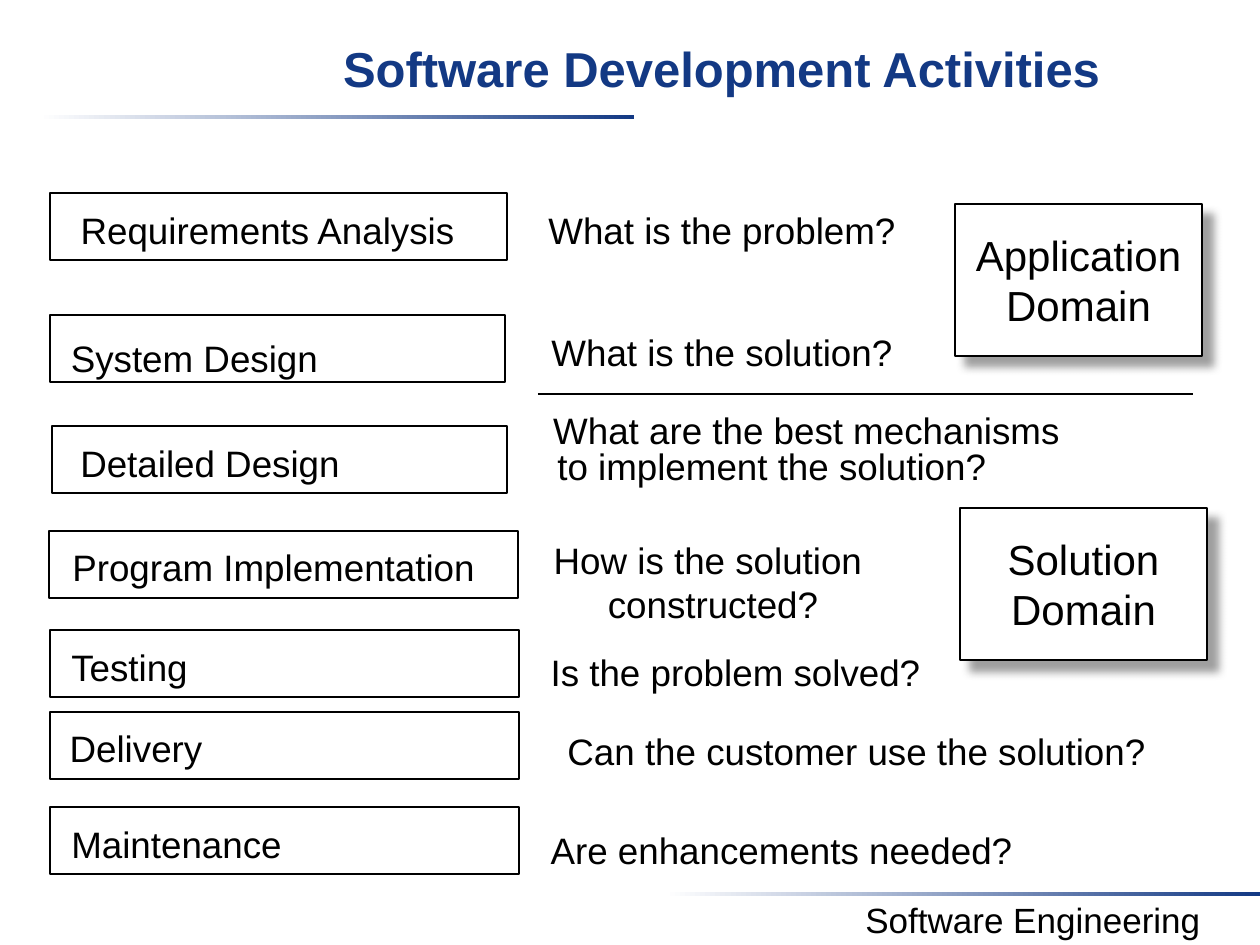
from lxml import etree
from pptx import Presentation
from pptx.dml.color import RGBColor
from pptx.enum.shapes import MSO_CONNECTOR as CONN, MSO_SHAPE as SHAPE
from pptx.enum.text import MSO_ANCHOR as ANCHOR, MSO_AUTO_SIZE as AUTO, PP_ALIGN as ALIGN
from pptx.oxml import parse_xml
from pptx.oxml.ns import nsdecls, qn
from pptx.util import Emu, Pt

COLORS = {"navy": "133984", "white": "FFFFFF", "black": "000000", "gray": "808080"}
RGB = {name: RGBColor.from_string(value) for name, value in COLORS.items()}


def px(*values):
    """Convert pixels (126 to the inch) to EMU."""
    return [Emu(round(v * 914400 / 126)) for v in values]


def write(sp, text, size=21, color="black", bold=False, wrap=False, grow=True,
          anchor=ANCHOR.TOP):
    tf = sp.text_frame
    tf.word_wrap = wrap
    tf.auto_size = AUTO.SHAPE_TO_FIT_TEXT if grow else AUTO.NONE
    tf.vertical_anchor = anchor
    for i, line in enumerate(text.split("\n")):
        p = tf.add_paragraph() if i else tf.paragraphs[0]
        p.alignment = ALIGN.CENTER
        r = p.add_run()
        r.text = line
        r.font.name, r.font.size, r.font.bold = "Arial", Pt(size), bold
        r.font.color.rgb = RGB[color]


prs = Presentation()
prs.slide_width, prs.slide_height = px(1260, 945)
s = prs.slides.add_slide(prs.slide_layouts[5])
shapes = s.shapes

# Title
title = shapes.title
title.left, title.top, title.width, title.height = px(136, 30, 1171, 118)
write(title, "Software Development Activities", size=28, color="navy", bold=True,
      wrap=True, grow=False)
title.text_frame.margin_top = px(8)[0]

# Gradient rules under the title and above the footer
for x, y in ((39, 115), (665, 892)):
    sp = shapes.add_shape(SHAPE.RECTANGLE, *px(x, y, 595, 4))
    sp.shadow.inherit = False
    sp.line.fill.background()
    sp.fill.gradient()
    sp.fill.gradient_angle = 0
    for stop, color in zip(sp.fill.gradient_stops, ("white", "navy")):
        stop.color.rgb = RGB[color]

# Footer
footer = shapes.add_textbox(*px(806, 892, 454, 55))
write(footer, "Software Engineering", size=20, wrap=True)

# Activity frames: left, top, width
for x, y, w in ((50, 193, 457), (50, 315, 455), (52, 426, 455), (49, 531, 469),
                (50, 630, 469), (50, 712, 469), (50, 807, 469)):
    sp = shapes.add_shape(SHAPE.RECTANGLE, *px(x, y, w, 67))
    sp.shadow.inherit = False
    sp.fill.solid()
    sp.fill.fore_color.rgb = RGB["white"]
    sp.line.color.rgb = RGB["black"]
    sp.line.width = Pt(1)

# Activity names and their questions: text, left, top, width, height
for text, x, y, w, h in (
    ("Requirements Analysis", 52, 202, 431, 57),
    ("What is the problem?", 523, 202, 398, 57),
    ("System Design", 51, 330, 287, 57),
    ("What is the solution?", 524, 324, 396, 57),
    ("Detailed Design", 60, 435, 300, 57),
    ("What are the best mechanisms", 525, 402, 563, 57),
    ("to implement the solution? ", 525, 438, 504, 57),
    ("Program Implementation", 45, 539, 457, 57),
    ("How is the solution \nconstructed?", 527, 532, 372, 101),
    ("Testing", 52, 639, 155, 57),
    ("Is the problem solved?", 523, 644, 425, 57),
    ("Delivery", 52, 720, 168, 57),
    ("Can the customer use the solution?", 532, 723, 649, 57),
    ("Maintenance", 53, 816, 247, 57),
    ("Are enhancements needed?", 524, 822, 515, 57),
):
    write(shapes.add_textbox(*px(x, y, w, h)), text)

# Domain cards with a drop shadow
for text, x, y in (("Application\nDomain", 955, 204), ("Solution\nDomain", 960, 508)):
    sp = shapes.add_shape(SHAPE.RECTANGLE, *px(x, y, 247, 152))
    sp.shadow.inherit = False
    sp.fill.solid()
    sp.fill.fore_color.rgb = RGB["white"]
    sp.line.color.rgb = RGB["black"]
    sp.line.width = Pt(1)
    effects = sp._element.spPr.find(qn("a:effectLst"))
    effects.append(parse_xml(
        f'<a:outerShdw {nsdecls("a")} blurRad="{Pt(5)}" dist="{Pt(8.5)}" dir="2700000" '
        f'algn="ctr" rotWithShape="0"><a:srgbClr val="{COLORS["gray"]}">'
        '<a:alpha val="75000"/></a:srgbClr></a:outerShdw>'))
    write(sp, text, size=24, grow=False, anchor=ANCHOR.MIDDLE)

# Divider between the two domains
divider = shapes.add_connector(CONN.STRAIGHT, *px(538, 394, 1193, 394))
divider.line.color.rgb = RGB["black"]
divider.line.width = Pt(1)
etree.SubElement(divider._element.spPr, qn("a:effectLst"))

prs.save("out.pptx")
